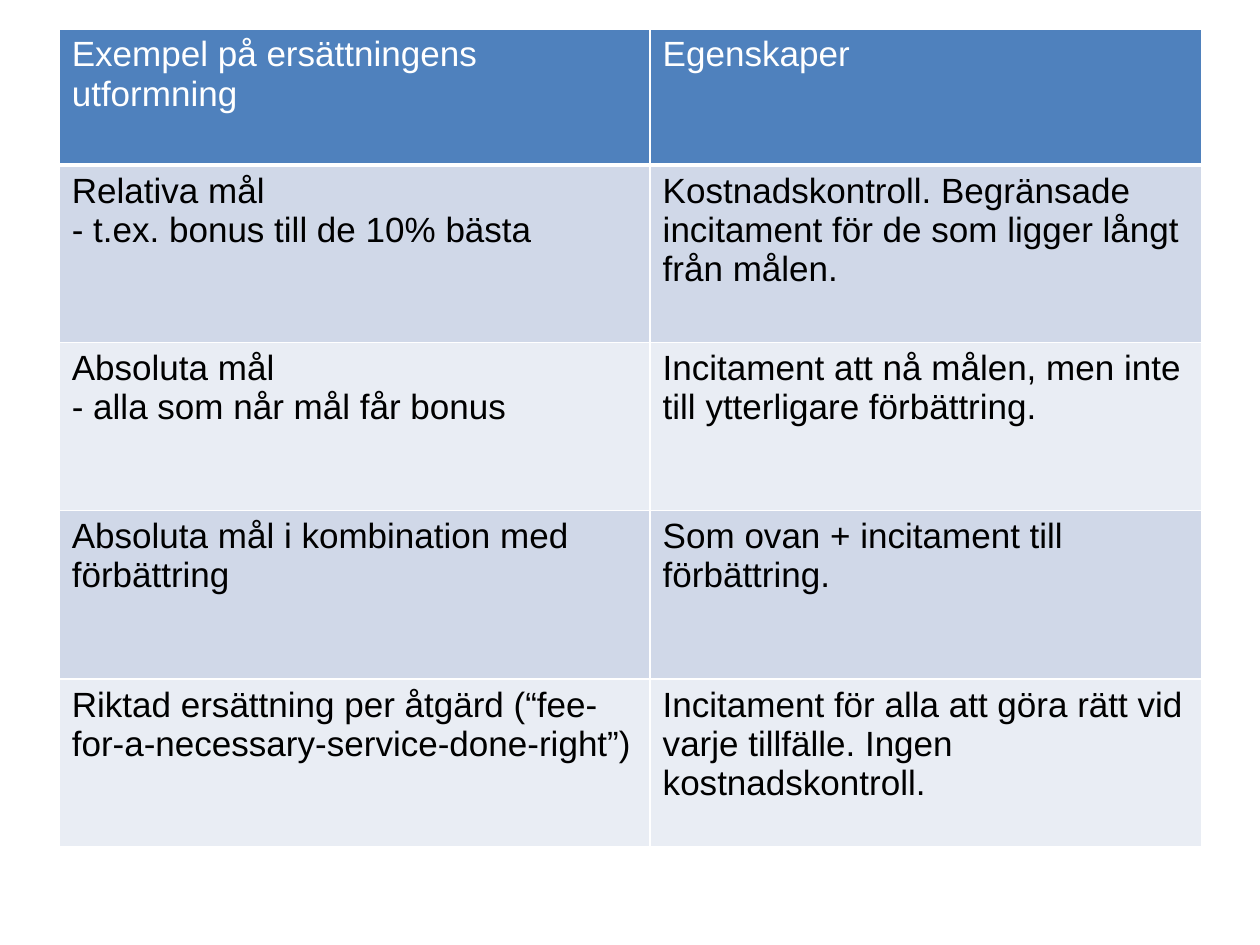
from lxml.etree import SubElement
from pptx import Presentation
from pptx.dml.color import RGBColor
from pptx.oxml.ns import qn
from pptx.util import Inches, Pt

COLORS = {
    "header": "4F81BD",
    "odd_row": "D0D8E8",
    "even_row": "E9EDF4",
    "border": "FFFFFF",
    "header_text": "FFFFFF",
    "body_text": "000000",
}
COLUMN_WIDTHS = [4.69, 4.38]
ROW_HEIGHTS = [1.08, 1.41, 1.33, 1.34, 1.33]

# Each cell is a list of paragraphs
ROWS = [
    [["Exempel på ersättningens utformning"], ["Egenskaper"]],
    [["Relativa mål", "- t.ex. bonus till de 10% bästa"],
     ["Kostnadskontroll. Begränsade incitament för de som ligger långt från målen."]],
    [["Absoluta mål", "- alla som når mål får bonus"],
     ["Incitament att nå målen, men inte till ytterligare förbättring."]],
    [["Absoluta mål i kombination med förbättring"],
     ["Som ovan + incitament till förbättring."]],
    [["Riktad ersättning per åtgärd (“fee-for-a-necessary-service-done-right”)"],
     ["Incitament för alla att göra rätt vid varje tillfälle. Ingen kostnadskontroll."]],
]


def set_borders(cell, bottom_width):
    properties = cell._tc.get_or_add_tcPr()
    widths = {"a:lnL": 1, "a:lnR": 1, "a:lnT": 1, "a:lnB": bottom_width}
    for tag, width in widths.items():
        line = SubElement(properties, qn(tag), w=str(Pt(width)))
        fill = SubElement(line, qn("a:solidFill"))
        SubElement(fill, qn("a:srgbClr"), val=COLORS["border"])


def fill_cell(cell, lines, fill_name, text_name, bottom_width):
    set_borders(cell, bottom_width)
    cell.fill.solid()
    cell.fill.fore_color.rgb = RGBColor.from_string(COLORS[fill_name])
    frame = cell.text_frame
    for index, text in enumerate(lines):
        paragraph = frame.add_paragraph() if index else frame.paragraphs[0]
        run = paragraph.add_run()
        run.text = text
        run.font.name = "Arial"
        run.font.size = Pt(20)
        run.font.bold = False
        run.font.color.rgb = RGBColor.from_string(COLORS[text_name])


def add_incentive_table(slide, left, top):
    shape = slide.shapes.add_table(
        len(ROWS), len(COLUMN_WIDTHS), Inches(left), Inches(top),
        Inches(sum(COLUMN_WIDTHS)), Inches(sum(ROW_HEIGHTS)))
    table = shape.table
    for column, width in zip(table.columns, COLUMN_WIDTHS):
        column.width = Inches(width)
    for row, height in zip(table.rows, ROW_HEIGHTS):
        row.height = Inches(height)

    # Header row, then alternating body bands
    for row_index, row in enumerate(ROWS):
        if row_index == 0:
            style = ("header", "header_text", 3)
        else:
            style = ("odd_row" if row_index % 2 else "even_row", "body_text", 1)
        for column_index, lines in enumerate(row):
            fill_cell(table.cell(row_index, column_index), lines, *style)


def main():
    presentation = Presentation()
    presentation.slide_width = Inches(10)
    presentation.slide_height = Inches(7.5)
    slide = presentation.slides.add_slide(presentation.slide_layouts[6])
    add_incentive_table(slide, 0.47, 0.23)
    presentation.save("out.pptx")


if __name__ == "__main__":
    main()
